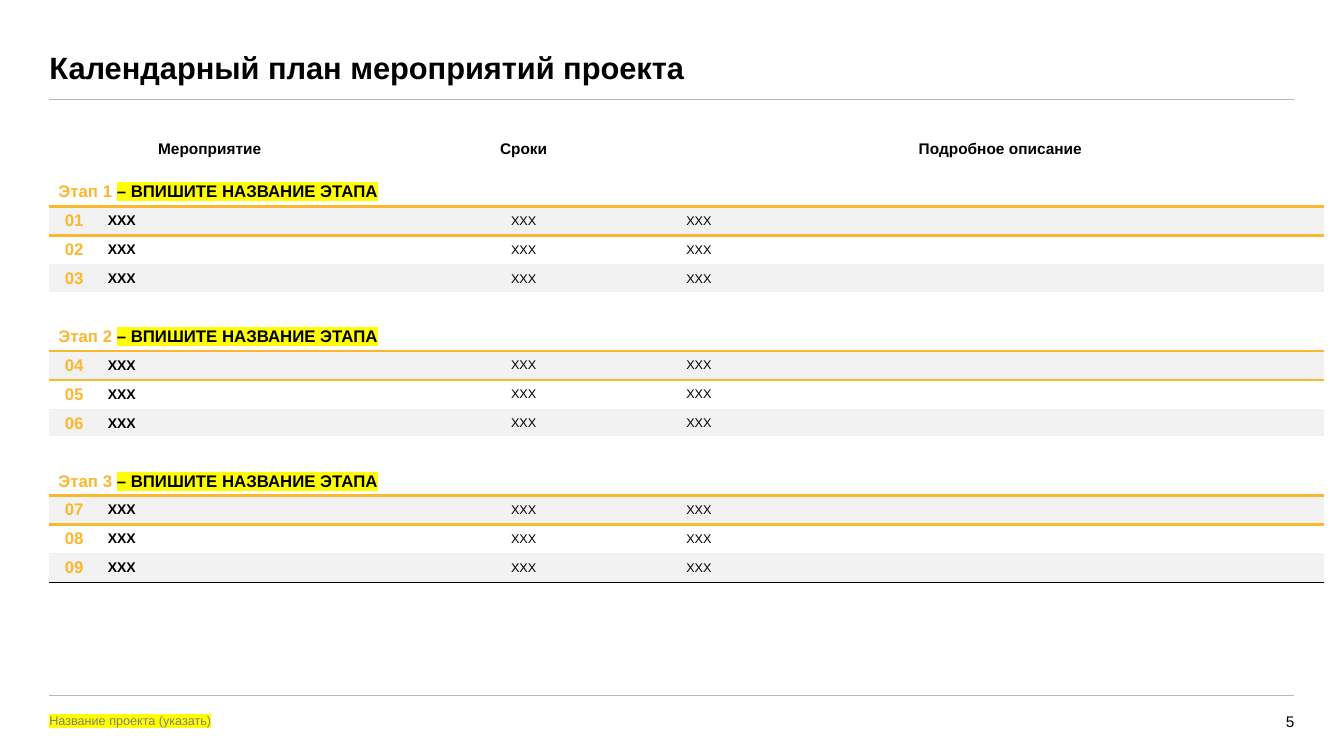
from dataclasses import dataclass
from typing import Optional

from lxml.etree import SubElement as Sub
from pptx import Presentation
from pptx.dml.color import RGBColor as Rgb
from pptx.enum.shapes import MSO_CONNECTOR as Conn
from pptx.enum.text import MSO_ANCHOR as Anchor, PP_ALIGN as Align
from pptx.oxml.ns import qn
from pptx.util import Inches, Pt


@dataclass(frozen=True)
class Theme:
    font: str = "Arial"
    black: str = "000000"
    white: str = "FFFFFF"
    gold: str = "FAB82E"
    band: str = "F2F2F2"
    rule: str = "B7B7B6"
    gray: str = "808080"
    mark: str = "FFFF00"
    title: int = 22
    stage: int = 12
    head: int = 11
    task: int = 10
    note: int = 9


@dataclass(frozen=True)
class Span:
    text: str
    size: int
    color: str = "000000"
    bold: bool = False
    mark: Optional[str] = None


@dataclass(frozen=True)
class Label:
    box: tuple
    span: Span
    align: Align


@dataclass(frozen=True)
class Edge:
    color: str
    width: float


T = Theme()
LEFT, RIGHT = 0.49, 12.83
COLS = (0.49, 2.69, 0.08, 2.61, 0.08, 6.41)
HEAD = 0.57
STAGES, TASKS = 3, 3
BLOCK = TASKS + 2  # stage heading, tasks, gap
LINES = STAGES * BLOCK - 1
PITCH = 4.02 / LINES
GOLD, WHITE, BLACK = Edge(T.gold, 2.25), Edge(T.white, 2.25), Edge(T.black, 0.5)
RULES = (0.99, 6.9)
LABELS = (
    Label((LEFT, 7.02, 11.87, 0.25),
          Span("Название проекта (указать)", T.note, T.gray, mark=T.mark), Align.LEFT),
    Label((12.48, 7.07, 0.36, 0.17), Span("5", T.head), Align.RIGHT),
)


def write(para, spans: tuple, align: Align = Align.LEFT) -> None:
    para.alignment = align
    for span in spans:
        run = para.add_run()
        run.text = span.text
        look = {"name": T.font, "size": Pt(span.size), "bold": span.bold}
        for key, val in look.items():
            setattr(run.font, key, val)
        run.font.color.rgb = Rgb.from_string(span.color)
        if span.mark:
            props = run.font._element
            glow = Sub(props, qn("a:highlight"))
            Sub(glow, qn("a:srgbClr"), val=span.mark)
            props.find(qn("a:solidFill")).addnext(glow)


def frame(shape, anchor: Anchor):
    """Clear the margins, set the anchor and return the first paragraph."""
    text = shape.text_frame
    look = {"margin_left": 0, "margin_right": 0, "margin_top": 0,
            "margin_bottom": 0, "word_wrap": True, "vertical_anchor": anchor}
    for key, val in look.items():
        setattr(text, key, val)
    return text.paragraphs[0]


def add_title(slide) -> None:
    shape = slide.shapes.title
    place = zip(("left", "top", "width", "height"), (LEFT, 0.53, 10.68, 0.32))
    for key, val in place:
        setattr(shape, key, Inches(val))
    para = frame(shape, Anchor.BOTTOM)
    para.line_spacing = Pt(23)
    write(para, (Span("Календарный план мероприятий проекта", T.title, bold=True),))


def add_rule(slide, y: float) -> None:
    line = slide.shapes.add_connector(
        Conn.STRAIGHT, Inches(LEFT), Inches(y), Inches(RIGHT), Inches(y))
    line.line.color.rgb = Rgb.from_string(T.rule)
    line.line.width = Pt(0.5)
    Sub(line._element.spPr, qn("a:effectLst"))


def add_label(slide, label: Label) -> None:
    box = slide.shapes.add_textbox(*map(Inches, label.box))
    write(frame(box, Anchor.MIDDLE), (label.span,), label.align)


def border(cell, side: str, edge: Edge, slot: int) -> None:
    props = cell._tc.get_or_add_tcPr()
    line = Sub(props, qn("a:" + side), w=str(Pt(edge.width)))
    Sub(Sub(line, qn("a:solidFill")), qn("a:srgbClr"), val=edge.color)
    props.insert(slot, line)


def style(cell, fill: Optional[str] = None, top: Optional[Edge] = None,
          low: Optional[Edge] = None) -> None:
    look = {"margin_left": Inches(0.09), "margin_right": Inches(0.09),
            "margin_top": Inches(0.04), "margin_bottom": Inches(0.04),
            "vertical_anchor": Anchor.MIDDLE}
    for key, val in look.items():
        setattr(cell, key, val)
    if fill:
        cell.fill.solid()
        cell.fill.fore_color.rgb = Rgb.from_string(fill)
    else:
        cell.fill.background()
    edges = [(side, edge) for side, edge in (("lnT", top), ("lnB", low)) if edge]
    for slot, (side, edge) in enumerate(edges):
        border(cell, side, edge, slot)


def put(cell, spans: tuple, align: Align = Align.LEFT) -> None:
    write(cell.text_frame.paragraphs[0], spans, align)


def shrink(cell) -> None:
    """Keep an empty cell from stretching its row."""
    if not cell.text_frame.text:
        para = cell.text_frame.paragraphs[0]._p
        Sub(para, qn("a:endParaRPr"), sz=str(T.note * 100))


def add_stage(grid, stage: int) -> None:
    first = 1 + stage * BLOCK
    last = stage == STAGES - 1
    wide = range(len(COLS))
    for col in wide:
        style(grid.cell(first, col), low=GOLD)
    grid.cell(first, 0).merge(grid.cell(first, len(COLS) - 1))
    put(grid.cell(first, 0), (
        Span(f"Этап {stage + 1} ", T.stage, T.gold, True),
        Span("– ВПИШИТЕ НАЗВАНИЕ ЭТАПА", T.stage, T.black, True, T.mark)))
    for task in range(TASKS):
        row = first + 1 + task
        end = BLACK if last else WHITE
        for col in wide:
            style(grid.cell(row, col), T.band if task % 2 == 0 else None,
                  GOLD if task == 0 else None, end if task == TASKS - 1 else None)
        num = f"{stage * TASKS + task + 1:02d}"
        put(grid.cell(row, 0), (Span(num, T.stage, T.gold, True),), Align.CENTER)
        put(grid.cell(row, 1), (Span("XXX", T.task, bold=True),))
        put(grid.cell(row, 3), (Span("XXX", T.note),), Align.CENTER)
        put(grid.cell(row, 5), (Span("XXX", T.note),))
    if not last:
        for col in wide:
            style(grid.cell(first + BLOCK - 1, col), top=WHITE)


def add_plan(slide) -> None:
    size = (LEFT, 1.19, sum(COLS), HEAD + LINES * PITCH)
    grid = slide.shapes.add_table(LINES + 1, len(COLS), *map(Inches, size)).table
    grid.first_row = grid.horz_banding = False
    grid._tbl.tblPr.find(qn("a:tableStyleId")).text = (
        "{2D5ABB26-0587-4C30-8999-92F81FD0307C}")
    for col, width in zip(grid.columns, COLS):
        col.width = Inches(width)
    for num, row in enumerate(grid.rows):
        row.height = Inches(PITCH if num else HEAD)
    for col in range(len(COLS)):
        style(grid.cell(0, col))
    grid.cell(0, 0).merge(grid.cell(0, 1))
    heads = {0: "Мероприятие", 3: "Сроки", 5: "Подробное описание"}
    for col, text in heads.items():
        put(grid.cell(0, col), (Span(text, T.head, bold=True),), Align.CENTER)
    for stage in range(STAGES):
        add_stage(grid, stage)
    for cell in grid.iter_cells():
        shrink(cell)


def main() -> None:
    deck = Presentation()
    deck.slide_width, deck.slide_height = Inches(13.33), Inches(7.5)
    slide = deck.slides.add_slide(deck.slide_layouts[5])
    for y in RULES:
        add_rule(slide, y)
    add_title(slide)
    for label in LABELS:
        add_label(slide, label)
    add_plan(slide)
    deck.save("out.pptx")


if __name__ == "__main__":
    main()
